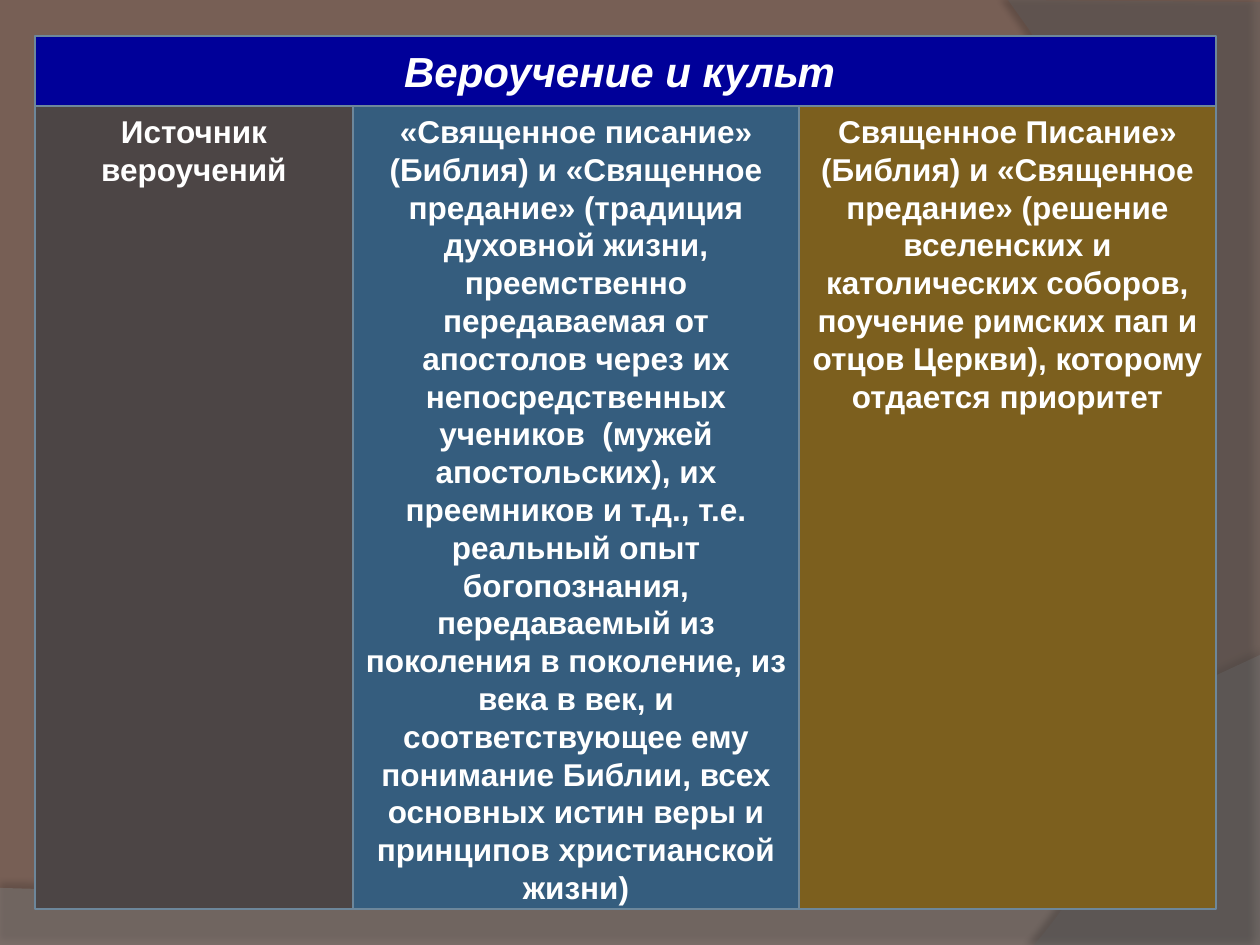
import dataclasses

import lxml.etree
import pptx
import pptx.dml.color
import pptx.enum.text
import pptx.oxml.ns
import pptx.util

PX = 914400 / 126
WIDE, HIGH = 1260, 945
LEFT, TOP, SPLIT, FOOT = 35, 36, 106, 909
MID = pptx.enum.text.MSO_ANCHOR.MIDDLE
HEAD = pptx.enum.text.MSO_ANCHOR.TOP
Point = tuple[int, int]


@dataclasses.dataclass
class Panel:
    text: str
    left: int
    right: int
    top: int
    foot: int
    fill: str
    size: int = 18
    slant: bool = False
    anchor: pptx.enum.text.MSO_ANCHOR = HEAD


@dataclasses.dataclass
class Wave:
    """A backdrop shape: one Bezier curve closed by straight edges."""
    curve: tuple[Point, Point, Point, Point]
    edge: list[Point]
    fill: str
    alpha: int
    shade: int
    dist: float
    angle: int


WAVES = [
    Wave(((1260, 655), (704, 919), (493, 906), (0, 888)),
         [(0, 946), (1260, 946)], "7F7F7F", 45, 35, 3.5, 270),
    Wave(((1034, 945), (1178, 780), (1283, 378), (1008, 0)),
         [(1260, 2), (1260, 945)], "5E5E5E", 40, 45, 4, 180),
]

PANELS = [
    Panel("«Священное писание» (Библия) и «Священное предание» (традиция "
          "духовной жизни, преемственно передаваемая от апостолов через их "
          "непосредственных учеников  (мужей апостольских), их преемников и "
          "т.д., т.е. реальный опыт богопознания, передаваемый из поколения "
          "в поколение, из века в век, и соответствующее ему понимание "
          "Библии, всех основных истин веры и принципов христианской жизни)",
          353, 799, SPLIT, FOOT, "355D7E"),
    Panel("Источник вероучений", LEFT, 353, SPLIT, FOOT, "4C4545"),
    Panel("Вероучение и культ ", LEFT, 1216, TOP, SPLIT, "000099",
          24, True, MID),
    Panel("Священное Писание» (Библия) и «Священное предание» (решение "
          "вселенских и католических соборов, поучение римских пап и отцов "
          "Церкви), которому отдается приоритет",
          799, 1216, SPLIT, FOOT, "7C5F1E"),
]


def px(count: int) -> int:
    return round(count * PX)


def rgb(code: str) -> pptx.dml.color.RGBColor:
    return pptx.dml.color.RGBColor.from_string(code)


def paint(fill, code: str) -> None:
    fill.solid()
    fill.fore_color.rgb = rgb(code)


def add_tag(parent, name: str, **attrs):
    tag = pptx.oxml.ns.qn(name)
    return lxml.etree.SubElement(
        parent, tag, {key: str(val) for key, val in attrs.items()})


def bezier(curve: tuple[Point, ...], steps: int = 40) -> list[Point]:
    a, b, c, d = curve
    points = []
    for step in range(steps + 1):
        t = step / steps
        u = 1 - t
        points.append(tuple(
            round(u**3 * a[i] + 3 * u * u * t * b[i]
                  + 3 * u * t * t * c[i] + t**3 * d[i]) for i in (0, 1)))
    return points


def draw_wave(slide, wave: Wave) -> None:
    start, *rest = bezier(wave.curve) + wave.edge
    pen = slide.shapes.build_freeform(*start, scale=PX)
    pen.add_line_segments(rest, close=True)
    shape = pen.convert_to_shape()
    paint(shape.fill, wave.fill)
    shape.line.fill.background()
    shape.shadow.inherit = False
    props = shape._element.spPr
    tone = props.find(".//" + pptx.oxml.ns.qn("a:srgbClr"))
    add_tag(tone, "a:alpha", val=wave.alpha * 1000)
    effect = props.find(pptx.oxml.ns.qn("a:effectLst"))
    shadow = add_tag(effect, "a:outerShdw", blurRad=pptx.util.Pt(4),
                     dist=pptx.util.Pt(wave.dist), dir=wave.angle * 60000,
                     algn="ctr", rotWithShape=0)
    tone = add_tag(shadow, "a:srgbClr", val="000000")
    add_tag(tone, "a:alpha", val=wave.shade * 1000)


def draw_panel(slide, panel: Panel) -> None:
    shape = slide.shapes.add_shape(
        pptx.enum.shapes.MSO_SHAPE.RECTANGLE, px(panel.left), px(panel.top),
        px(panel.right - panel.left), px(panel.foot - panel.top))
    shape.shadow.inherit = False
    paint(shape.fill, panel.fill)
    paint(shape.line.fill, "6D879B")
    shape.line.width = pptx.util.Pt(1.5)
    frame = shape.text_frame
    frame.word_wrap = True
    frame.vertical_anchor = panel.anchor
    frame.margin_left = frame.margin_right = px(12)
    frame.margin_top = frame.margin_bottom = px(6)
    para = frame.paragraphs[0]
    para.alignment = pptx.enum.text.PP_ALIGN.CENTER
    para.line_spacing = pptx.util.Pt(panel.size * 1.2)
    run = para.add_run()
    run.text = panel.text
    font = run.font
    font.name = "Arial"
    font.size = pptx.util.Pt(panel.size)
    font.bold = True
    font.italic = panel.slant
    font.color.rgb = rgb("FFFFFF")


def main() -> None:
    deck = pptx.Presentation()
    deck.slide_width, deck.slide_height = px(WIDE), px(HIGH)
    slide = deck.slides.add_slide(deck.slide_layouts[6])
    paint(slide.background.fill, "775F55")
    for wave in WAVES:
        draw_wave(slide, wave)
    for panel in PANELS:
        draw_panel(slide, panel)
    deck.save("out.pptx")


if __name__ == "__main__":
    main()
